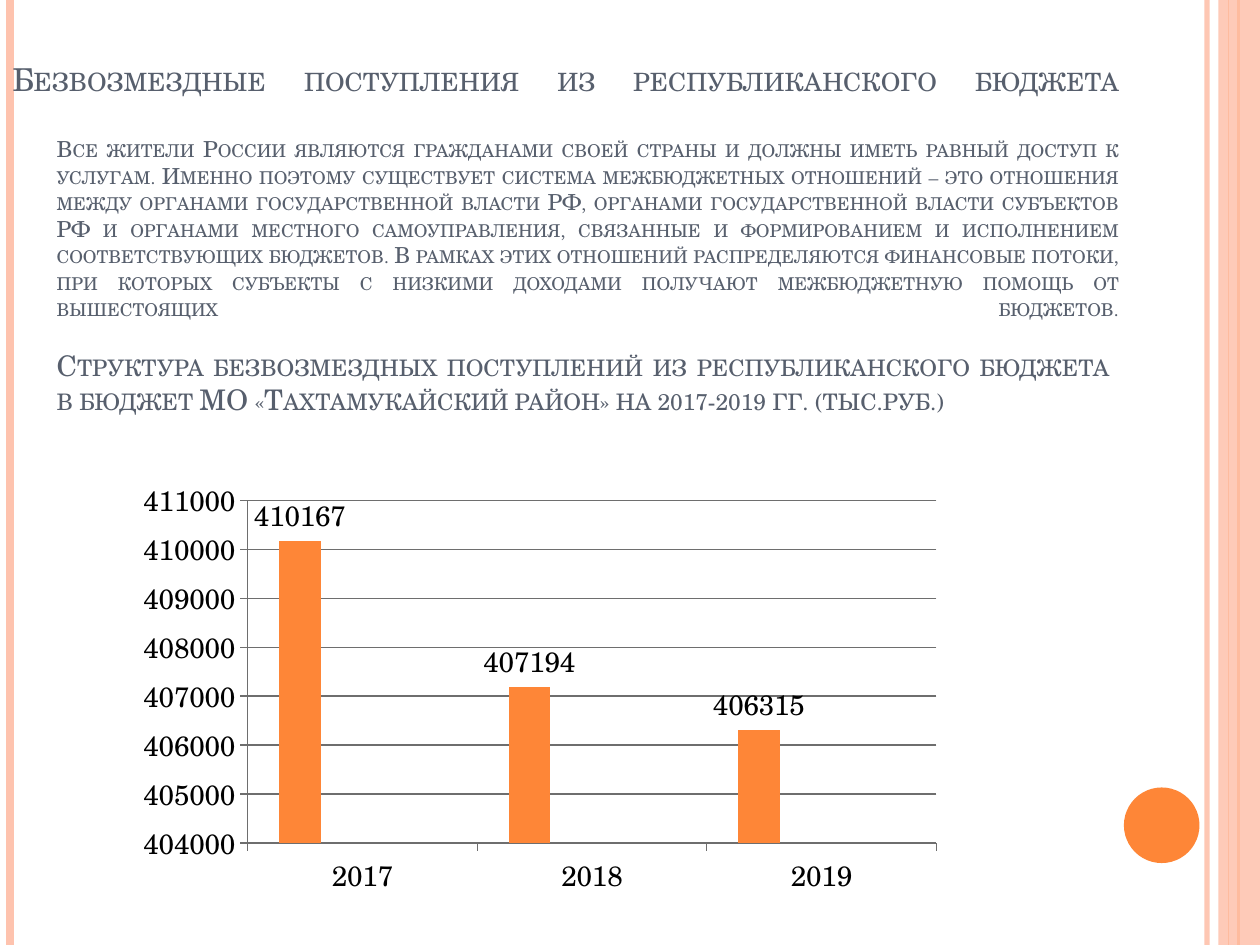
from copy import deepcopy
from dataclasses import dataclass

from lxml import etree
from pptx import Presentation
from pptx.chart.data import CategoryChartData
from pptx.dml.color import RGBColor
from pptx.enum.chart import XL_CHART_TYPE, XL_LABEL_POSITION, XL_TICK_MARK
from pptx.enum.shapes import MSO_CONNECTOR, MSO_SHAPE
from pptx.enum.text import MSO_ANCHOR, MSO_AUTO_SIZE, PP_ALIGN
from pptx.oxml.ns import qn
from pptx.util import Inches, Pt

COLUMN = XL_CHART_TYPE.COLUMN_CLUSTERED
ABOVE = XL_LABEL_POSITION.OUTSIDE_END
TICK = XL_TICK_MARK.OUTSIDE
STRAIGHT = MSO_CONNECTOR.STRAIGHT
RECT, OVAL = MSO_SHAPE.RECTANGLE, MSO_SHAPE.OVAL
BOTTOM = MSO_ANCHOR.BOTTOM
FIXED = MSO_AUTO_SIZE.NONE
JUSTIFY = PP_ALIGN.JUSTIFY

FONT = "TeX Gyre Schola"
COLORS = {
    "peach": "FEC3AE", "orange": "FE8637", "slate": "575F6D", "black": "000000",
    "blue": "7598D9", "red": "B32C16", "yellow": "F5CD2D", "grid": "6E6E6E",
}


@dataclass
class Stripe:
    x: float
    color: str
    width: float
    alpha: int = 100


@dataclass
class Block:
    kind: int
    box: tuple
    color: str
    alpha: int = 100


@dataclass
class Part:
    text: str
    size: float


@dataclass
class Series:
    name: str
    values: tuple
    color: str


STRIPES = [
    Stripe(9.58, "peach", 3, 93),
    Stripe(0.08, "peach", 4.5),
    Stripe(9.83, "orange", 1.5),
    Stripe(9.75, "orange", 0.75),
]
BLOCKS = [
    Block(RECT, (9.67, 0, 0.33, 7.5), "peach", 87),
    Block(OVAL, (8.92, 6.25, 0.6, 0.6), "orange"),
]
PARTS = [
    Part("Безвозмездные поступления из республиканского бюджета", 18),
    Part(
        "Все жители России являются гражданами своей страны и должны иметь "
        "равный доступ к услугам. Именно поэтому существует система "
        "межбюджетных отношений – это отношения между органами "
        "государственной власти РФ, органами государственной власти "
        "субъектов РФ и органами местного самоуправления, связанные и "
        "формированием и исполнением соответствующих бюджетов. В рамках этих "
        "отношений распределяются финансовые потоки, при которых субъекты с "
        "низкими доходами получают межбюджетную помощь от вышестоящих "
        "бюджетов.", 12.6),
    Part(
        "Структура безвозмездных поступлений из республиканского бюджета  в "
        "бюджет МО «Тахтамукайский район» на 2017-2019 гг. (тыс.руб.)", 16.2),
]
YEARS = ("2017", "2018", "2019")
EMPTY = (None,) * len(YEARS)
SERIES = [
    Series("Series 1", (410167, 407194, 406315), "orange"),
    Series("Series 2", EMPTY, "blue"),
    Series("Series 3", EMPTY, "red"),
    Series("Series 4", EMPTY, "yellow"),
]
PLOT = {"x": 0.114, "y": 0.179, "w": 0.631, "h": 0.705}


def rgb(name: str) -> RGBColor:
    return RGBColor.from_string(COLORS[name])


def fade(shape, alpha: int) -> None:
    if alpha < 100:
        tint = next(shape._element.spPr.iter(qn("a:srgbClr")))
        etree.SubElement(tint, qn("a:alpha"), val=str(alpha * 1000))


def draw_stripe(slide, item: Stripe) -> None:
    x = Inches(item.x)
    line = slide.shapes.add_connector(STRAIGHT, x, 0, x, Inches(7.5))
    line.line.color.rgb = rgb(item.color)
    line.line.width = Pt(item.width)
    etree.SubElement(line._element.spPr, qn("a:effectLst"))
    fade(line, item.alpha)


def draw_block(slide, item: Block) -> None:
    shape = slide.shapes.add_shape(item.kind, *map(Inches, item.box))
    shape.shadow.inherit = False
    shape.fill.solid()
    shape.fill.fore_color.rgb = rgb(item.color)
    shape.line.fill.background()
    fade(shape, item.alpha)


def fill_title(slide, parts: list[Part]) -> None:
    title = slide.shapes.title
    slide.shapes._spTree.append(title._element)
    title.left, title.top, title.width, title.height = map(
        Inches, (0, 2.81, 8.98, 0.54))
    frame = title.text_frame
    frame.auto_size = FIXED
    frame.word_wrap = True
    frame.vertical_anchor = BOTTOM
    para = frame.paragraphs[0]
    para.text = "\v\v".join(part.text for part in parts)
    para.alignment = JUSTIFY
    props = para._p.get_or_add_pPr()
    props.set("marL", str(Inches(0.35)))
    props.set("indent", str(Inches(-0.35)))
    for run, part in zip(para.runs, parts):
        run.font.name = FONT
        run.font.size = Pt(part.size)
        run.font.color.rgb = rgb("slate")
        run.font._element.set("cap", "small")
    style = None
    for node in para._p:
        if node.tag == qn("a:r"):
            style = node.find(qn("a:rPr"))
        elif node.tag == qn("a:br"):
            node.append(deepcopy(style))


def place_plot(chart) -> None:
    area = chart._chartSpace.chart.plotArea
    for old in area.findall(qn("c:layout")):
        area.remove(old)
    layout = etree.Element(qn("c:layout"))
    area.insert(0, layout)
    manual = etree.SubElement(layout, qn("c:manualLayout"))
    rules = {"layoutTarget": "inner", "xMode": "edge", "yMode": "edge", **PLOT}
    for key, value in rules.items():
        etree.SubElement(manual, qn(f"c:{key}"), val=str(value))


def draw_chart(slide, series: list[Series]) -> None:
    data = CategoryChartData()
    data.categories = YEARS
    for item in series:
        data.add_series(item.name, item.values)
    box = map(Inches, (0.98, 3.28, 8.66, 3.86))
    chart = slide.shapes.add_chart(COLUMN, *box, data).chart
    chart.has_legend = chart.has_title = False
    chart.font.name = FONT
    chart.font.size = Pt(16)
    chart.font.color.rgb = rgb("black")
    place_plot(chart)
    plot = chart.plots[0]
    plot.gap_width = 150
    plot.overlap = 0
    plot.vary_by_categories = False
    for bar, item in zip(plot.series, series):
        bar.format.fill.solid()
        bar.format.fill.fore_color.rgb = rgb(item.color)
    labels = plot.series[0].data_labels
    labels.show_value = True
    labels.position = ABOVE
    scale = chart.value_axis
    scale.minimum_scale, scale.maximum_scale = 404000, 411000
    scale.major_unit = 1000
    scale.has_major_gridlines = True
    for axis in (chart.category_axis, scale):
        axis.major_tick_mark = TICK
    for part in (chart.category_axis, scale, scale.major_gridlines):
        part.format.line.color.rgb = rgb("grid")
        part.format.line.width = Pt(0.75)


def main() -> None:
    deck = Presentation()
    deck.slide_width, deck.slide_height = Inches(10), Inches(7.5)
    slide = deck.slides.add_slide(deck.slide_layouts[5])
    for stripe in STRIPES:
        draw_stripe(slide, stripe)
    for block in BLOCKS:
        draw_block(slide, block)
    fill_title(slide, PARTS)
    draw_chart(slide, SERIES)
    deck.save("out.pptx")


if __name__ == "__main__":
    main()
